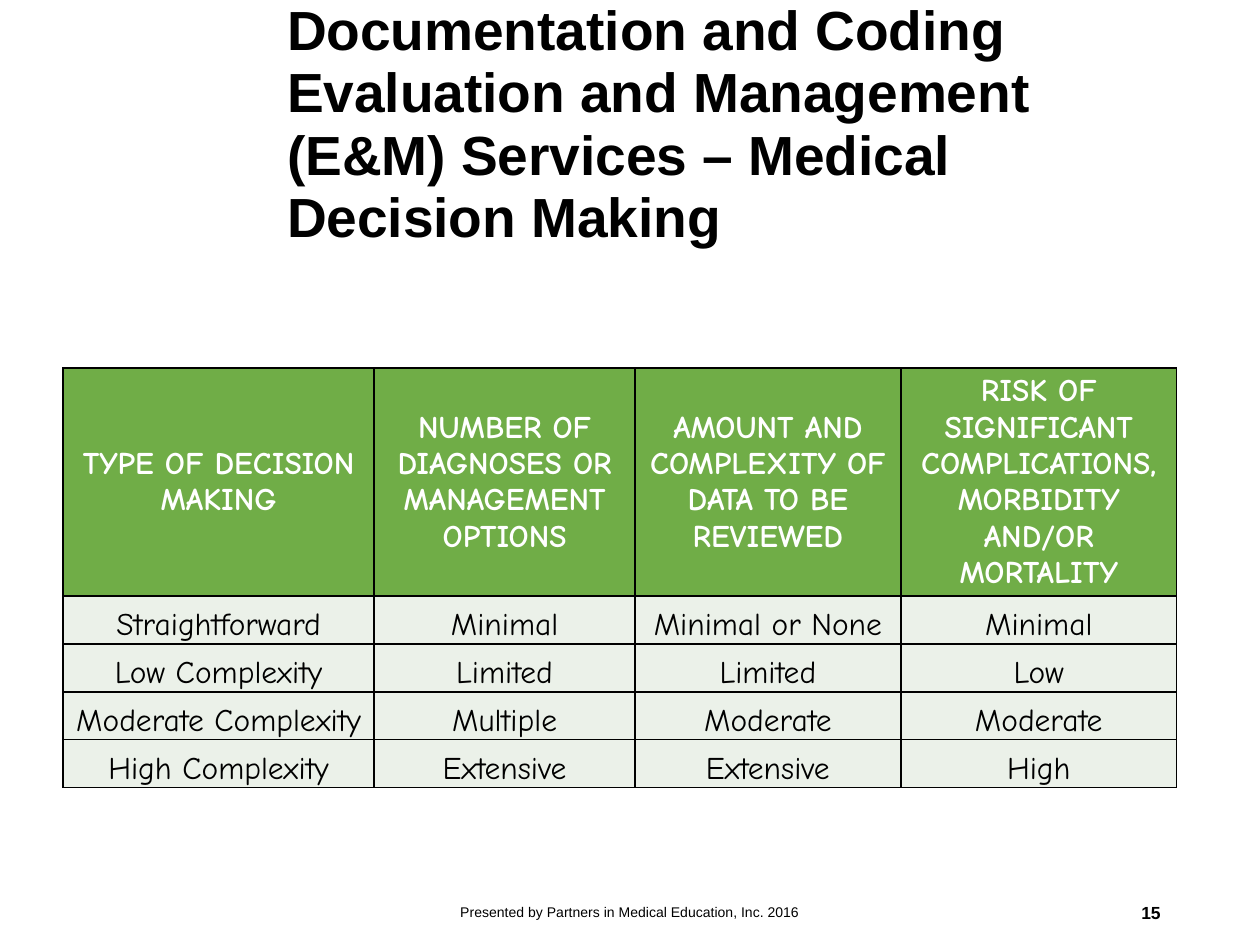
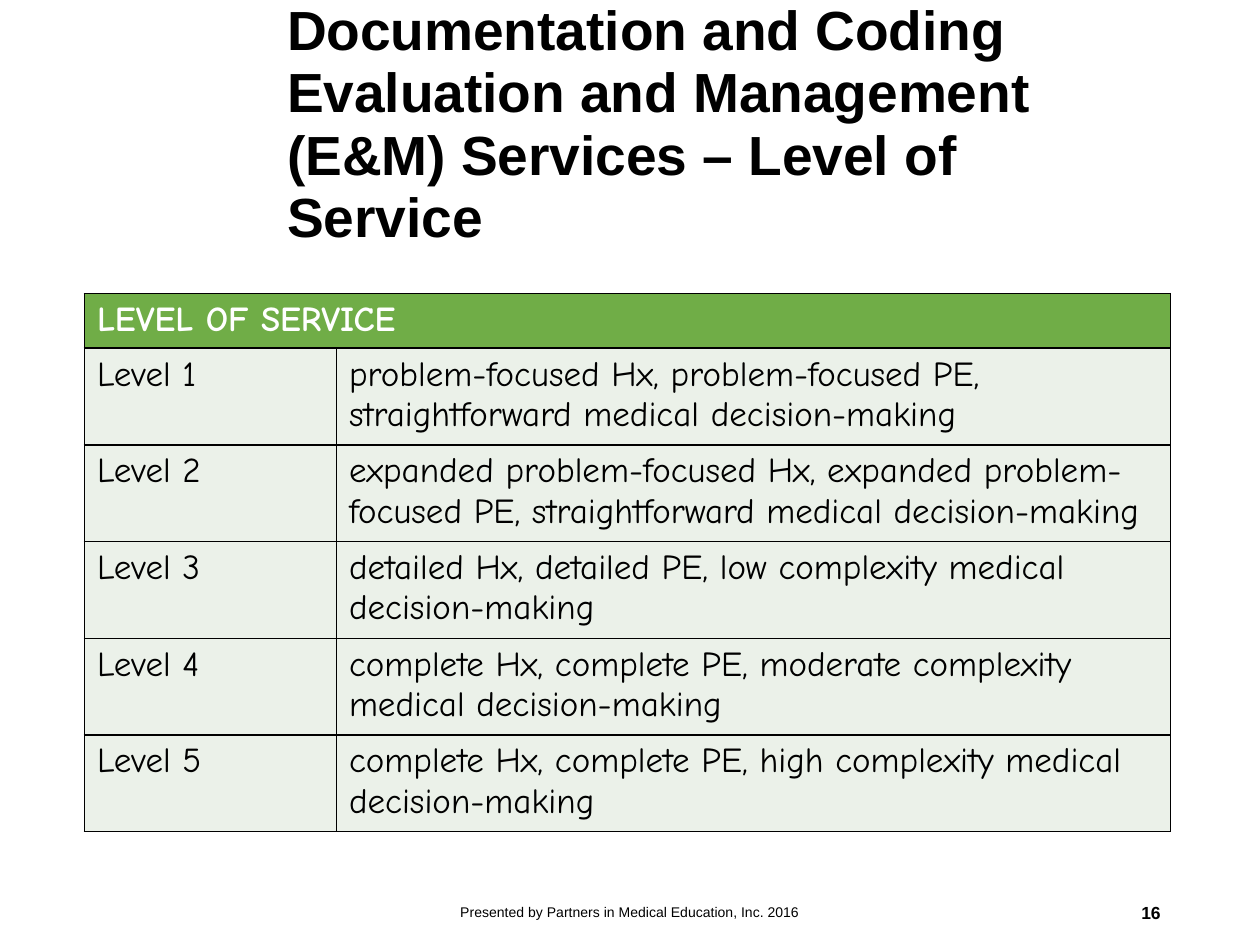
from pptx import Presentation
from pptx import util as u
from pptx.dml.color import RGBColor
from pptx.enum import text as t
from pptx.oxml import parse_xml
from pptx.oxml.ns import nsdecls

BLACK, WHITE, GREEN, PALE = "000000", "FFFFFF", "70AD47", "EBF1E9"
HEAD = "Documentation and Coding Evaluation and Management (E&M) Services – "
FOOT = "Presented by Partners in Medical Education, Inc. 2016"
LEFT, MID, RIGHT = t.PP_ALIGN.LEFT, t.PP_ALIGN.CENTER, t.PP_ALIGN.RIGHT
ANCHOR = t.MSO_ANCHOR

RISK = [
    ["TYPE OF DECISION MAKING", "NUMBER OF DIAGNOSES OR MANAGEMENT OPTIONS",
     "AMOUNT AND COMPLEXITY OF DATA TO BE REVIEWED",
     "RISK OF SIGNIFICANT COMPLICATIONS, MORBIDITY AND/OR MORTALITY"],
    ["Straightforward", "Minimal", "Minimal or None", "Minimal"],
    ["Low Complexity", "Limited", "Limited", "Low"],
    ["Moderate Complexity", "Multiple", "Moderate", "Moderate"],
    ["High Complexity", "Extensive", "Extensive", "High"],
]
NEEDS = [
    "problem-focused Hx, problem-focused PE, straightforward medical decision-making",
    "expanded problem-focused Hx, expanded problem-focused PE, "
    "straightforward medical decision-making",
    "detailed Hx, detailed PE, low complexity medical decision-making",
    "complete Hx, complete PE, moderate complexity medical decision-making",
    "complete Hx, complete PE, high complexity medical decision-making",
]
LEVELS = [["LEVEL OF SERVICE", ""]]
LEVELS += [[f"Level {n}", need] for n, need in enumerate(NEEDS, 1)]


def rgb(code):
    return RGBColor.from_string(code)


def write(frame, words, size, font="Arial", color=BLACK, bold=False,
          align=LEFT, lead=None):
    para = frame.paragraphs[0]
    para.alignment = align
    if lead:
        para.line_spacing = lead
    run = para.add_run()
    run.text = words
    face = run.font
    face.name, face.size, face.bold = font, u.Pt(size), bold
    face.color.rgb = rgb(color)


def border(cell, color=BLACK, width=1):
    """Line all four sides; call before the fill, which must come last."""
    props = cell._tc.get_or_add_tcPr()
    for side in ("lnL", "lnR", "lnT", "lnB"):
        props.append(parse_xml(
            f'<a:{side} {nsdecls("a")} w="{u.Pt(width)}"><a:solidFill>'
            f'<a:srgbClr val="{color}"/></a:solidFill></a:{side}>'))


class Deck:
    def __init__(self):
        self.show = Presentation()
        self.show.slide_width = u.Inches(10)
        self.show.slide_height = u.Inches(7.5)
        self.slide = None

    def page(self, topic, number):
        """Start a slide with the shared title, footer and page number."""
        self.slide = self.show.slides.add_slide(self.show.slide_layouts[6])
        self.box(2.18, 0.27, 7.14, 1.45, HEAD + topic, size=31.5, bold=True, lead=0.94)
        self.box(3.31, 7.04, 3.38, 0.4, FOOT, size=8, align=MID)
        self.box(7.06, 7.04, 2.25, 0.4, str(number), size=10, bold=True, align=RIGHT)

    def box(self, left, top, width, height, words, **style):
        place = map(u.Inches, (left, top, width, height))
        frame = self.slide.shapes.add_textbox(*place).text_frame
        frame.word_wrap = True
        frame.vertical_anchor = ANCHOR.MIDDLE
        write(frame, words, **style)

    def table(self, left, top, cols, rows, data, size, align=LEFT,
              anchors=(ANCHOR.TOP, ANCHOR.TOP), inset=None):
        """Draw a grid; anchors are for the head row and the body rows."""
        place = map(u.Inches, (left, top, sum(cols), sum(rows)))
        grid = self.slide.shapes.add_table(len(rows), len(cols), *place).table
        for col, width in zip(grid.columns, cols):
            col.width = u.Inches(width)
        for r, (row, height) in enumerate(zip(grid.rows, rows)):
            row.height = u.Inches(height)
            head = r == 0
            for cell, words in zip(row.cells, data[r]):
                border(cell)
                cell.fill.solid()
                cell.fill.fore_color.rgb = rgb(GREEN if head else PALE)
                cell.vertical_anchor = anchors[0 if head else 1]
                if inset is not None:
                    cell.margin_left = cell.margin_right = u.Inches(inset)
                    cell.margin_top, cell.margin_bottom = u.Inches(inset), 0
                if words:
                    write(cell.text_frame, words, size, "Comic Neue",
                          WHITE if head else BLACK, head, align)
        return grid


def main():
    deck = Deck()
    deck.page("Medical Decision Making", 15)
    deck.table(0.5, 2.92, [2.47, 2.07, 2.11, 2.19], [1.47] + [0.38] * 4, RISK,
               size=18, align=MID, anchors=(ANCHOR.MIDDLE, ANCHOR.BOTTOM), inset=0.01)

    deck.page("Level of Service", 16)
    grid = deck.table(0.67, 2.33, [2, 6.62], [0.41] * len(LEVELS), LEVELS, size=20)
    grid.cell(0, 0).merge(grid.cell(0, 1))
    deck.show.save("out.pptx")


if __name__ == "__main__":
    main()
